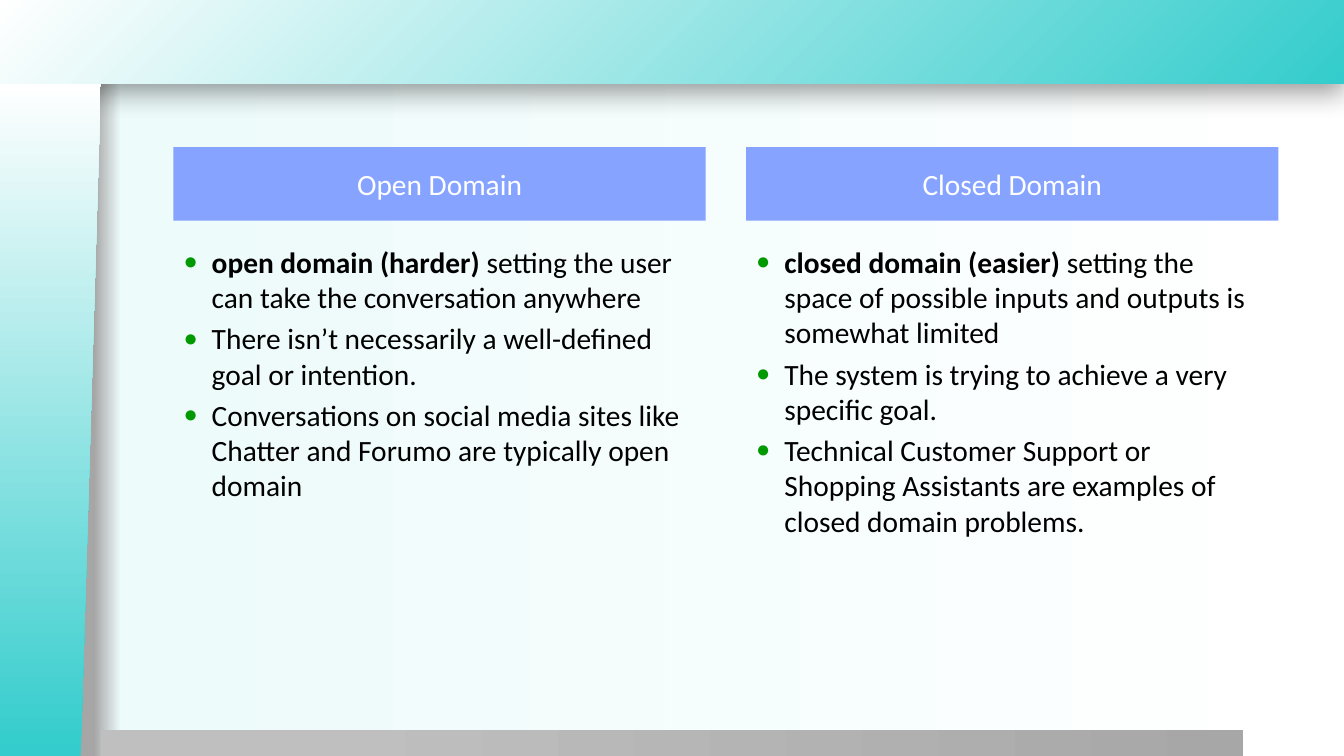
import dataclasses

import lxml.etree
import pptx
import pptx.dml.color
import pptx.enum.shapes
import pptx.enum.text
import pptx.oxml.ns
import pptx.util

Inches, Pt = pptx.util.Inches, pptx.util.Pt
qn = pptx.oxml.ns.qn
RGB = pptx.dml.color.RGBColor.from_string
PRESET = pptx.enum.shapes.MSO_SHAPE
ANCHOR = pptx.enum.text.MSO_ANCHOR


@dataclasses.dataclass(frozen=True)
class Theme:
    font: str = "Calibri"
    size: float = 21
    ink: str = "000000"
    header_ink: str = "FFFFFF"
    header_fill: str = "85A3FF"
    bullet: str = "009900"
    # Gradient stops: percent, colour
    page: tuple = ((7, "A6A6A6"), (9, "EDFBFB"), (100, "FFFFFF"))
    top_band: tuple = ((0, "34CCCC"), (100, "FFFFFF"))
    side_band: tuple = ((1, "34CCCC"), (100, "FFFFFF"))
    foot_band: tuple = ((20, "BFBFBF"), (100, "A7A7A7"))


THEME = Theme()

# Grid in inches: two equal columns, a header row and a list row
WIDTH, HEIGHT = 13.33, 7.5
LEFT, COLUMN, GUTTER = 1.72, 5.28, 0.4
HEADER_TOP, HEADER_HEIGHT = 1.46, 0.73
LIST_TOP, LIST_HEIGHT = 2.37, 4.78
TOP_BAND, SIDE_BAND, FOOT_BAND = 0.83, 1, 0.26
INDENT = 0.28

# Header, then bullets as (bold lead, rest)
DOMAINS = [
    ("Open Domain", [
        ("open domain (harder)",
         " setting the user can take the conversation anywhere"),
        ("", "There isn’t necessarily a well-defined goal or intention."),
        ("", "Conversations on social media sites like Chatter and Forumo "
             "are typically open domain"),
    ]),
    ("Closed Domain", [
        ("closed domain (easier)",
         " setting the space of possible inputs and outputs is "
         "somewhat limited"),
        ("", "The system is trying to achieve a very specific goal."),
        ("", "Technical Customer Support or Shopping Assistants are "
             "examples of closed domain problems."),
    ]),
]


def add_xml(parent, tag, **attributes):
    values = {name: str(value) for name, value in attributes.items()}
    return lxml.etree.SubElement(parent, qn(tag), values)


def paint_gradient(fill, owner, stops, from_corner=False):
    """Fill with stops running left to right, or out of the bottom right."""
    fill.gradient()
    gradient = owner.find(".//" + qn("a:gradFill"))
    for child in list(gradient):
        gradient.remove(child)
    stop_list = add_xml(gradient, "a:gsLst")
    for percent, colour in stops:
        stop = add_xml(stop_list, "a:gs", pos=percent * 1000)
        add_xml(stop, "a:srgbClr", val=colour)
    if from_corner:
        spread = add_xml(gradient, "a:path", path="circle")
        add_xml(spread, "a:fillToRect", l=100000, t=100000)
    else:
        add_xml(gradient, "a:lin", ang=0, scaled=0)


def add_band(slide, preset, left, top, width, height, stops,
             from_corner=False):
    band = slide.shapes.add_shape(preset, Inches(left), Inches(top),
                                  Inches(width), Inches(height))
    band.shadow.inherit = False
    band.line.fill.background()
    paint_gradient(band.fill, band.element, stops, from_corner)
    return band


def drop_shadow(band):
    effects = band.element.spPr.find(qn("a:effectLst"))
    shadow = add_xml(effects, "a:outerShdw", blurRad=Pt(20), dist=Pt(6),
                     dir=90 * 60000, algn="t", rotWithShape=0)
    colour = add_xml(shadow, "a:srgbClr", val="000000")
    add_xml(colour, "a:alpha", val=40000)


def place(placeholder, left, top, width, height, anchor):
    placeholder.left, placeholder.top = Inches(left), Inches(top)
    placeholder.width, placeholder.height = Inches(width), Inches(height)
    frame = placeholder.text_frame
    frame.word_wrap = True
    frame.auto_size = pptx.enum.text.MSO_AUTO_SIZE.NONE
    frame.vertical_anchor = anchor
    return frame


def style(paragraph, colour):
    font = paragraph.font
    font.name, font.size, font.bold = THEME.font, Pt(THEME.size), False
    font.color.rgb = RGB(colour)


def add_bullet_mark(paragraph):
    properties = paragraph._p.get_or_add_pPr()
    properties.set("marL", str(Inches(INDENT)))
    properties.set("indent", str(-Inches(INDENT)))
    marks = [add_xml(properties, "a:buClr"),
             add_xml(properties, "a:buSzPct", val=80000),
             add_xml(properties, "a:buFont", typeface="Arial"),
             add_xml(properties, "a:buChar", char="●")]
    add_xml(marks[0], "a:srgbClr", val=THEME.bullet)
    # Bullet settings come before the paragraph's default font
    default_font = properties.find(qn("a:defRPr"))
    if default_font is not None:
        properties.append(default_font)


def fill_header(header, left, text):
    frame = place(header, left, HEADER_TOP, COLUMN, HEADER_HEIGHT,
                  ANCHOR.MIDDLE)
    header.fill.solid()
    header.fill.fore_color.rgb = RGB(THEME.header_fill)
    frame.text = text
    paragraph = frame.paragraphs[0]
    paragraph.alignment = pptx.enum.text.PP_ALIGN.CENTER
    style(paragraph, THEME.header_ink)
    # The layout's header is bold, so its run is set too
    run_font = paragraph.runs[0].font
    run_font.name, run_font.size, run_font.bold = (
        THEME.font, Pt(THEME.size), False)
    run_font.color.rgb = RGB(THEME.header_ink)


def fill_list(body, left, bullets):
    frame = place(body, left, LIST_TOP, COLUMN, LIST_HEIGHT, ANCHOR.TOP)
    for number, (lead, rest) in enumerate(bullets):
        paragraph = frame.add_paragraph() if number else frame.paragraphs[0]
        style(paragraph, THEME.ink)
        add_bullet_mark(paragraph)
        for text, bold in ((lead, True), (rest, False)):
            if text:
                run = paragraph.add_run()
                run.text = text
                run.font.name, run.font.size = THEME.font, Pt(THEME.size)
                run.font.bold = bold
                run.font.color.rgb = RGB(THEME.ink)


def main():
    deck = pptx.Presentation()
    deck.slide_width, deck.slide_height = Inches(WIDTH), Inches(HEIGHT)
    slide = deck.slides.add_slide(deck.slide_layouts.get_by_name("Comparison"))
    title = slide.shapes.title.element
    title.getparent().remove(title)

    # Page and its framing bands
    paint_gradient(slide.background.fill, slide.element, THEME.page)
    top_band = add_band(slide, PRESET.RECTANGLE, 0, 0, WIDTH, TOP_BAND,
                        THEME.top_band, from_corner=True)
    drop_shadow(top_band)
    add_band(slide, PRESET.RECTANGLE, SIDE_BAND, HEIGHT - FOOT_BAND,
             WIDTH * 0.85, FOOT_BAND, THEME.foot_band)
    # The side band is laid flat around its centre, then turned upright
    length = HEIGHT - TOP_BAND
    side_band = add_band(slide, PRESET.FLOWCHART_MANUAL_INPUT,
                         (SIDE_BAND - length) / 2,
                         TOP_BAND + (length - SIDE_BAND) / 2,
                         length, SIDE_BAND, THEME.side_band)
    side_band.rotation = 270
    side_band.element.spPr.find(qn("a:xfrm")).set("flipV", "1")

    # The two compared domains
    for column, (heading, bullets) in enumerate(DOMAINS):
        left = LEFT + column * (COLUMN + GUTTER)
        fill_header(slide.placeholders[1 + 2 * column], left, heading)
        fill_list(slide.placeholders[2 + 2 * column], left, bullets)

    deck.save("out.pptx")


if __name__ == "__main__":
    main()
